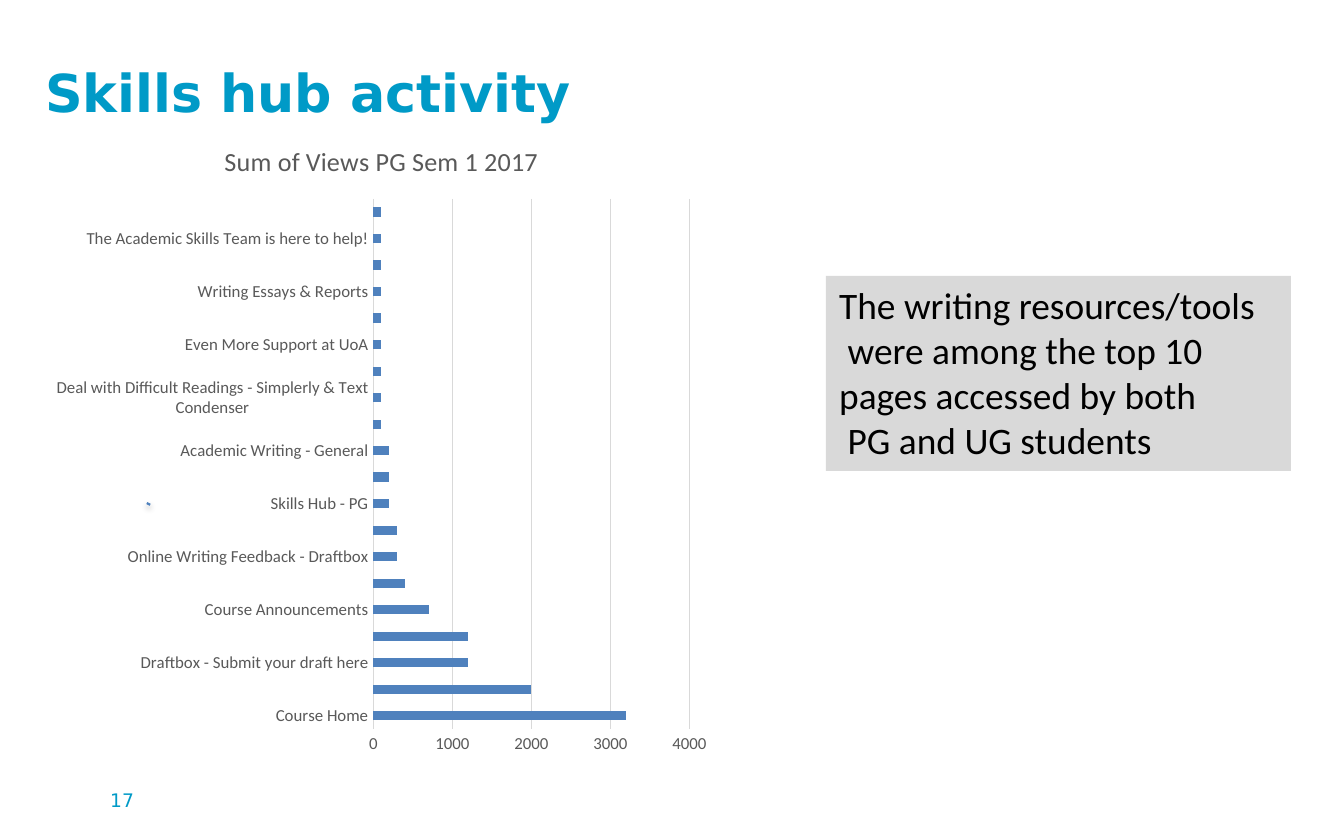
"""Build the Skills hub activity slide with its page-view chart."""
from lxml import etree
from pptx import Presentation
from pptx.chart.data import CategoryChartData
from pptx.dml.color import RGBColor
from pptx.enum.chart import XL_CHART_TYPE, XL_TICK_MARK
from pptx.enum.shapes import MSO_CONNECTOR, MSO_SHAPE
from pptx.enum.text import MSO_ANCHOR, PP_ALIGN
from pptx.oxml import parse_xml
from pptx.util import Pt

BAR = XL_CHART_TYPE.BAR_CLUSTERED
NO_TICK = XL_TICK_MARK.NONE
STRAIGHT = MSO_CONNECTOR.STRAIGHT
RECTANGLE = MSO_SHAPE.RECTANGLE
TOP, MIDDLE = MSO_ANCHOR.TOP, MSO_ANCHOR.MIDDLE
LEFT = PP_ALIGN.LEFT
PX = 6804
BLUE, GREY, DARK, CYAN = "4F81BD", "D9D9D9", "595959", "009AC7"
DRAWING = "http://schemas.openxmlformats.org/drawingml/2006/main"


def color(value):
    return RGBColor.from_string(value)


def style_font(font, name, size, ink, bold=False):
    values = {"name": name, "size": Pt(size), "bold": bold}
    for key, value in values.items():
        setattr(font, key, value)
    font.color.rgb = color(ink)


prs = Presentation()
prs.slide_width, prs.slide_height = 1344 * PX, 840 * PX
slide = prs.slides.add_slide(prs.slide_layouts[6])

labels = [
    ("Skills hub activity", (32, 48, 676, 88), 28, True, MIDDLE),
    ("17", (97, 782, 94, 58), 10, False, TOP),
]
for wording, bounds, size, bold, anchor in labels:
    label = slide.shapes.add_textbox(*[n * PX for n in bounds])
    label.text_frame.word_wrap = True
    label.text_frame.vertical_anchor = anchor
    label.text_frame.text = wording
    style_font(label.text_frame.paragraphs[0].runs[0].font, "DejaVu Sans", size, CYAN, bold)

page_views = [
    ("Course Home", 3200),
    ("Course modules", 2000),
    ("Draftbox - Submit your draft here", 1200),
    ("Course assignments", 1200),
    ("Course Announcements", 700),
    ("Correct mistakes in your Writing - Phraserly", 400),
    ("Online Writing Feedback - Draftbox", 300),
    ("Join a Workshop", 300),
    ("Skills Hub - PG", 200),
    ("APA Referencing", 200),
    ("Academic Writing - General", 200),
    ("Use More Academic Words - Wordsampler", 100),
    ("Deal with Difficult Readings - Simplerly & Text Condenser", 100),
    ("Advice from Successful Masters Students", 100),
    ("Even More Support at UoA", 100),
    ("Learn to use GREAT WRITING TOOLS and how to CITE WITH STYLE – 2 mini-workshops on this week!", 100),
    ("Writing Essays & Reports", 100),
    ("Course grades", 100),
    ("The Academic Skills Team is here to help!", 100),
    ("Contact Us", 100),
]
views_data = CategoryChartData()
views_data.categories = [page for page, _ in page_views]
views_data.add_series("Series 1", [views for _, views in page_views])
views_chart = slide.shapes.add_chart(
    BAR, *[n * PX for n in (43, 118, 677, 649)], views_data
).chart
style_font(views_chart.font, "Calibri", 10, "000000")
views_chart.has_legend = False
views_chart.has_title = True
chart_title = views_chart.chart_title.text_frame
chart_title.text = "Sum of Views PG Sem 1 2017"
style_font(chart_title.paragraphs[0].runs[0].font, "Calibri", 14, DARK)

pages_axis, views_axis = views_chart.category_axis, views_chart.value_axis
for axis in (pages_axis, views_axis):
    axis.major_tick_mark = axis.minor_tick_mark = NO_TICK
    style_font(axis.tick_labels.font, "Calibri", 9, DARK)
views_axis.has_major_gridlines = True
for rule in (pages_axis.format.line, views_axis.major_gridlines.format.line):
    rule.color.rgb = color(GREY)
    rule.width = Pt(0.75)
views_axis.format.line.fill.background()
scale = {"minimum_scale": 0, "maximum_scale": 4000, "major_unit": 1000}
for key, value in scale.items():
    setattr(views_axis, key, value)

plot = views_chart.plots[0]
plot.gap_width = 182
plot.vary_by_categories = False
bars = plot.series[0].format.fill
bars.solid()
bars.fore_color.rgb = color(BLUE)

dash = slide.shapes.add_connector(STRAIGHT, *[n * PX for n in (149, 503, 148, 505)])
dash.line.color.rgb = color(BLUE)
dash.line.width = Pt(2)
dash_shadow = parse_xml(
    f'<a:effectLst xmlns:a="{DRAWING}">'
    '<a:outerShdw blurRad="39370" dist="20320" dir="5400000" rotWithShape="0">'
    '<a:srgbClr val="000000"><a:alpha val="38000"/></a:srgbClr>'
    "</a:outerShdw></a:effectLst>"
)
etree.SubElement(dash.element.spPr, f"{{{DRAWING}}}effectLst").extend(list(dash_shadow))

finding = slide.shapes.add_shape(RECTANGLE, *[n * PX for n in (826, 276, 465, 195)])
finding.shadow.inherit = False
finding.fill.solid()
finding.fill.fore_color.rgb = color(GREY)
finding.line.fill.background()
finding.text_frame.word_wrap = True
finding.text_frame.vertical_anchor = TOP
finding.text_frame.text = "\n".join([
    "The writing resources/tools",
    " were among the top 10 pages accessed by both",
    " PG and UG students",
])
for paragraph in finding.text_frame.paragraphs:
    paragraph.alignment = LEFT
    style_font(paragraph.runs[0].font, "Calibri", 20, "000000")

prs.save("out.pptx")
